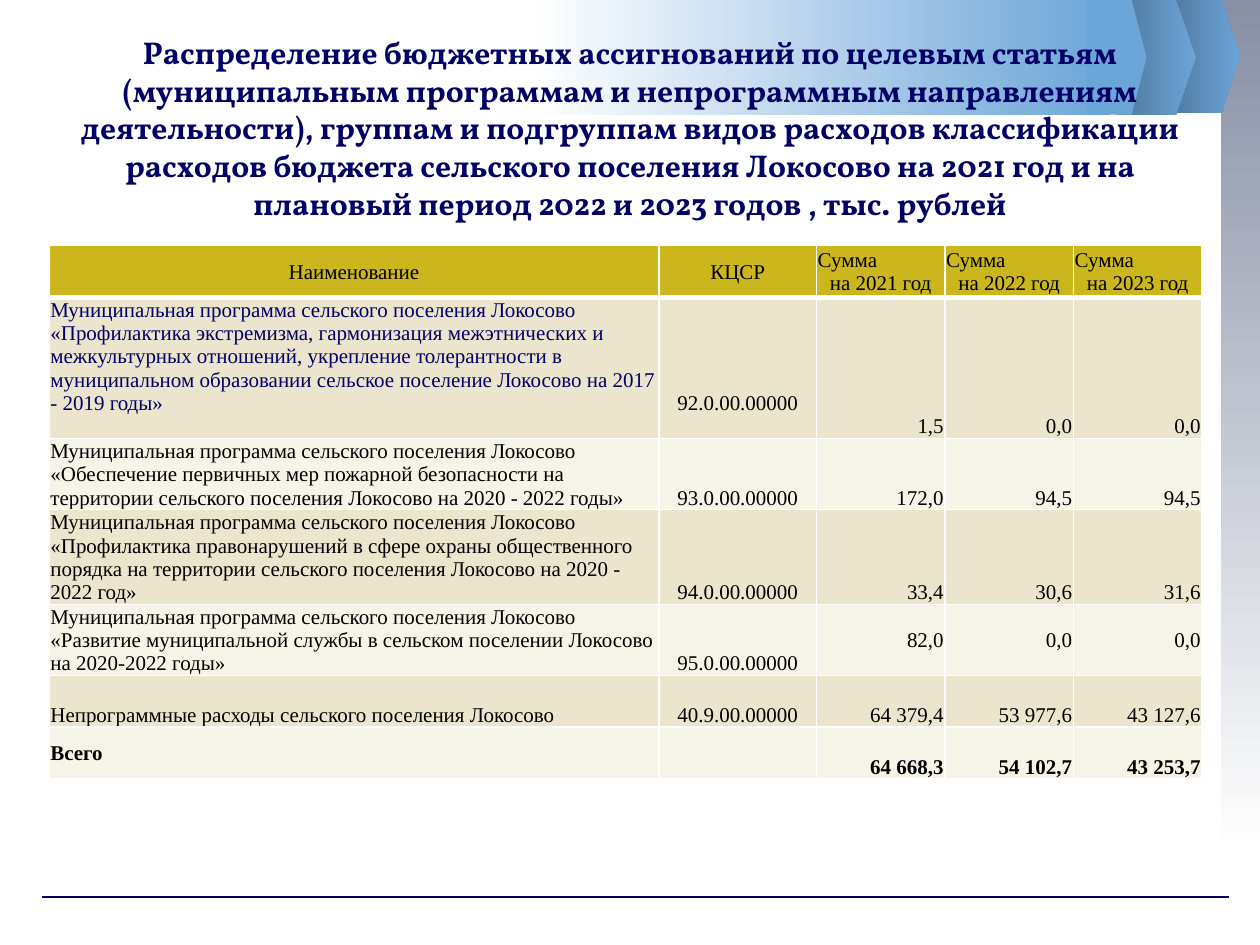
from pptx import Presentation
from pptx.dml.color import RGBColor
from pptx.enum.shapes import MSO_CONNECTOR as Connector, MSO_SHAPE as Shape
from pptx.enum.text import MSO_ANCHOR as Anchor, PP_ALIGN as Align
from pptx.oxml import parse_xml
from pptx.oxml.ns import nsdecls
from pptx.util import Inches, Pt

NAVY, BLACK, WHITE = "000066", "000000", "FFFFFF"
SKY, STEEL, SLATE = "6CA5D8", "4D769B", "878FA5"
GOLD, SAND, CREAM = "CBB61D", "ECE5CD", "F6F3E8"
LINE = 2.48
COLUMNS = [48.4, 12.5, 10.2, 10.2, 10.2]
ALIGNS = [Align.LEFT, Align.CENTER] + [Align.RIGHT] * 3

TITLE = (
    "Распределение бюджетных ассигнований по целевым статьям (муниципальным программам "
    "и непрограммным направлениям деятельности), группам и подгруппам видов расходов "
    "классификации расходов бюджета сельского поселения Локосово на 2021 год и на "
    "плановый период 2022 и 2023 годов , тыс. рублей"
)
HEADER = ["Наименование", "КЦСР"] + [f"Сумма\nна {year} год" for year in (2021, 2022, 2023)]
PROGRAM = "Муниципальная программа сельского поселения Локосово "
ROWS = [
    (6, [PROGRAM + "«Профилактика экстремизма, гармонизация межэтнических и межкультурных "
         "отношений, укрепление толерантности в муниципальном образовании сельское поселение "
         "Локосово на 2017 - 2019 годы»", "92.0.00.00000", "1,5", "0,0", "0,0"]),
    (3, [PROGRAM + "«Обеспечение первичных мер пожарной безопасности на территории сельского "
         "поселения Локосово на 2020 - 2022 годы»", "93.0.00.00000", "172,0", "94,5", "94,5"]),
    (4, [PROGRAM + "«Профилактика правонарушений в сфере охраны общественного порядка на "
         "территории сельского поселения Локосово на 2020 - 2022 год»",
         "94.0.00.00000", "33,4", "30,6", "31,6"]),
    (3, [PROGRAM + "«Развитие муниципальной службы в сельском поселении Локосово на "
         "2020-2022 годы»", "95.0.00.00000", "82,0", "0,0", "0,0"]),
    (2.2, ["Непрограммные расходы сельского поселения Локосово", "40.9.00.00000",
           "64 379,4", "53 977,6", "43 127,6"]),
    (2.2, ["Всего", "", "64 668,3", "54 102,7", "43 253,7"]),
]
RAISED = {(1, 0), (1, 1), (4, 2), (4, 3), (4, 4)}


def color(value):
    return RGBColor.from_string(value)


class SlideBuilder:
    title_font = "Vollkorn"
    table_font = "Times New Roman"

    def __init__(self, deck):
        self.deck = deck
        self.slide = deck.slides.add_slide(deck.slide_layouts[5])

    def across(self, share):
        return round(self.deck.slide_width * share / 100)

    def down(self, share):
        return round(self.deck.slide_height * share / 100)

    def area(self, left, top, width, height):
        return self.across(left), self.down(top), self.across(width), self.down(height)

    def style(self, para, font, size, ink, bold, align):
        para.alignment = align
        for span in para.runs:
            span.font.name, span.font.size, span.font.bold = font, Pt(size), bold
            span.font.color.rgb = color(ink)

    def band(self, kind, place, start, end, angle=0):
        box = self.slide.shapes.add_shape(kind, *self.area(*place))
        box.shadow.inherit = False
        box.line.fill.background()
        if kind == Shape.PENTAGON:
            box.adjustments[0] = 0.25
        if start == end:
            box.fill.solid()
            box.fill.fore_color.rgb = color(start)
            return
        box.fill.gradient()
        box.fill.gradient_angle = angle
        for stop, tint, position in zip(box.fill.gradient_stops, (start, end), (0, 1)):
            stop.color.rgb = color(tint)
            stop.position = position

    def rule(self, left, right, top):
        line = self.slide.shapes.add_connector(
            Connector.STRAIGHT, self.across(left), self.down(top),
            self.across(right), self.down(top))
        line.line.color.rgb = color(NAVY)
        line.line.width = Pt(0.75)
        line.element.spPr.append(parse_xml(f"<a:effectLst {nsdecls('a')}/>"))

    def title(self, text, place):
        box = self.slide.shapes.title
        box.left, box.top, box.width, box.height = self.area(*place)
        frame = box.text_frame
        frame.text = text
        frame.word_wrap = True
        frame.vertical_anchor = Anchor.MIDDLE
        self.style(frame.paragraphs[0], self.title_font, 18, NAVY, True, Align.CENTER)
        box.element.getparent().append(box.element)

    def borders(self, cell, bottom):
        properties = cell._tc.get_or_add_tcPr()
        for side, width in (("L", 1), ("R", 1), ("T", 1), ("B", bottom)):
            properties.append(parse_xml(
                f'<a:ln{side} {nsdecls("a")} w="{Pt(width)}"><a:solidFill>'
                f'<a:srgbClr val="{WHITE}"/></a:solidFill></a:ln{side}>'))

    def cell(self, cell, text, fill, align, anchor, ink=BLACK, bold=False, lift=0, bottom=1):
        self.borders(cell, bottom)
        cell.fill.solid()
        cell.fill.fore_color.rgb = color(fill)
        cell.margin_left = cell.margin_right = cell.margin_top = Inches(0.01)
        cell.margin_bottom = self.down(lift)
        cell.vertical_anchor = anchor
        cell.text_frame.text = text
        for para in cell.text_frame.paragraphs:
            self.style(para, self.table_font, 12, ink, bold, align)

    def table(self, left, top):
        heights = [2.2 * LINE] + [lines * LINE for lines, _ in ROWS]
        grid = self.slide.shapes.add_table(
            len(heights), len(COLUMNS),
            *self.area(left, top, sum(COLUMNS), sum(heights))).table
        for column, width in zip(grid.columns, COLUMNS):
            column.width = self.across(width)
        for row, height in zip(grid.rows, heights):
            row.height = self.down(height)
        for c, text in enumerate(HEADER):
            cell = grid.cell(0, c)
            self.cell(cell, text, GOLD, Align.CENTER, Anchor.MIDDLE, bottom=3)
            if c > 1:
                cell.text_frame.paragraphs[0].alignment = Align.LEFT
        for r, (_, texts) in enumerate(ROWS, start=1):
            total = r == len(ROWS)
            for c, text in enumerate(texts):
                self.cell(
                    grid.cell(r, c), text, SAND if r % 2 else CREAM, ALIGNS[c],
                    Anchor.MIDDLE if total and c == 0 else Anchor.BOTTOM,
                    ink=NAVY if (r, c) == (1, 0) else BLACK, bold=total,
                    lift=LINE if (r, c) in RAISED else 0)


def main():
    deck = Presentation()
    deck.slide_width, deck.slide_height = Inches(10), Inches(7.5)
    page = SlideBuilder(deck)
    page.band(Shape.RECTANGLE, (96.9, 0, 3.1, 90.27), SLATE, WHITE, 270)
    page.rule(3.3, 97.5, 94.93)
    page.band(Shape.PENTAGON, (92.5, -0.13, 5.9, 12.13), STEEL, SKY)
    page.band(Shape.PENTAGON, (88.6, 0, 6.3, 12.13), STEEL, SKY)
    page.band(Shape.RECTANGLE, (42.1, 0, 46, 12.13), WHITE, SKY)
    page.band(Shape.PENTAGON, (86.3, 0, 4.7, 12.13), SKY, SKY)
    page.title(TITLE, (3.9, 3.07, 92.2, 20.8))
    page.table(3.9, 26)
    deck.save("out.pptx")


if __name__ == "__main__":
    main()
